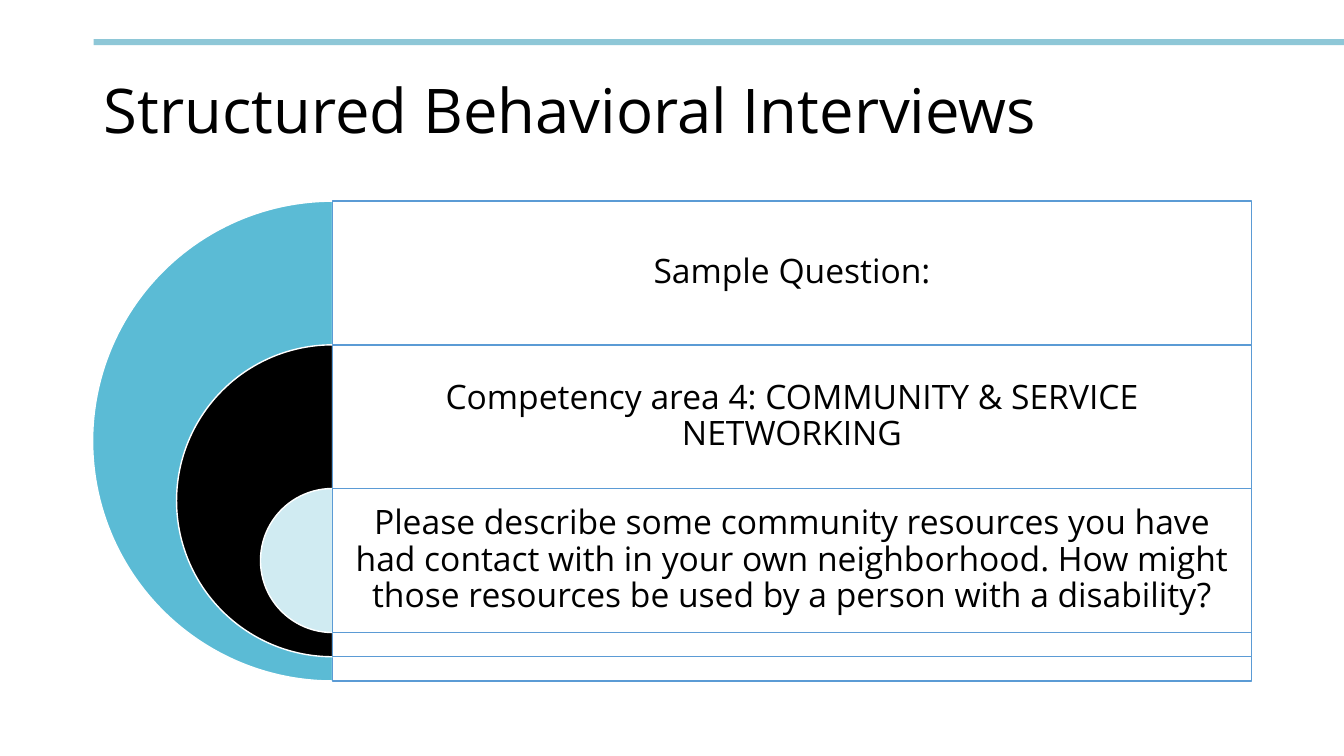
from dataclasses import dataclass

from lxml.etree import SubElement
from pptx import Presentation
from pptx.dml.color import RGBColor
from pptx.enum.shapes import MSO_SHAPE as Kind
from pptx.enum.text import MSO_ANCHOR as Anchor, PP_ALIGN as Align
from pptx.oxml.ns import qn
from pptx.shapes.autoshape import Shape
from pptx.slide import Slide
from pptx.text.text import TextFrame
from pptx.util import Cm, Pt

WIDE, HIGH = 33.87, 19.05
AXIS, TOP = 8.38, 5.07
BAND, SHRINK = 3.62, 4.23
DISC, WIDTH = 12.09, 23.16


@dataclass
class Level:
    text: str
    fill: str


LEVELS = [
    Level("Sample Question:", "5BBBD5"),
    Level("Competency area 4: COMMUNITY & SERVICE NETWORKING", "000000"),
    Level("Please describe some community resources you have had contact "
          "with in your own neighborhood. How might those resources be used "
          "by a person with a disability?", "D0EBF2"),
]


def color(code: str) -> RGBColor:
    return RGBColor.from_string(code)


def draw(slide: Slide, kind: Kind, box: tuple[float, ...], fill: str,
         line: str = "") -> Shape:
    shape = slide.shapes.add_shape(kind, *map(Cm, box))
    shape.shadow.inherit = False
    shape.fill.solid()
    shape.fill.fore_color.rgb = color(fill)
    if line:
        shape.line.color.rgb = color(line)
        shape.line.width = Pt(1)
    else:
        shape.line.fill.background()
    return shape


def write(frame: TextFrame, text: str, size: int, align: Align,
          inset: dict[str, float]) -> None:
    frame.text = text
    form = {"word_wrap": True, "vertical_anchor": Anchor.MIDDLE}
    form |= {f"margin_{side}": Cm(gap) for side, gap in inset.items()}
    for name, value in form.items():
        setattr(frame, name, value)
    para = frame.paragraphs[0]
    para.alignment = align
    para.line_spacing = 0.9
    for name, value in {"name": "Open Sans", "size": Pt(size)}.items():
        setattr(para.font, name, value)
    para.font.color.rgb = color("000000")


def fade(shape: Shape, share: int) -> None:
    """Set the opacity of a solid fill, in percent."""
    tone = shape.fill._xPr.find(qn("a:solidFill"))[0]
    SubElement(tone, qn("a:alpha")).set("val", str(share * 1000))


def add_level(slide: Slide, level: Level, rank: int) -> None:
    """Draw a half disc with its panel and text; each rank sits inside the last."""
    top = TOP + rank * BAND
    size = DISC - rank * SHRINK
    half = draw(slide, Kind.PIE, (AXIS - size / 2, top, size, size),
                level.fill, "FFFFFF")
    half.adjustments[0] = 54  # 90 degrees
    half.adjustments[1] = 162  # 270 degrees
    panel = draw(slide, Kind.RECTANGLE, (AXIS, top, WIDTH, size),
                 "FFFFFF", "5B9BD5")
    fade(panel, 90)
    label = slide.shapes.add_textbox(*map(Cm, (AXIS, top, WIDTH, BAND)))
    sides = ("left", "top", "right", "bottom")
    write(label.text_frame, level.text, 24, Align.CENTER,
          dict.fromkeys(sides, 0.25))


def main() -> None:
    deck = Presentation()
    deck.slide_width, deck.slide_height = Cm(WIDE), Cm(HIGH)
    slide = deck.slides.add_slide(deck.slide_layouts.get_by_name("Title Only"))
    draw(slide, Kind.RECTANGLE, (2.36, 0.99, WIDE - 2.36, 0.15), "8EC7D7")

    title = slide.shapes.title
    box = {"left": 2.34, "top": 1.02, "width": 29.21, "height": 3.68}
    for name, value in box.items():
        setattr(title, name, Cm(value))
    write(title.text_frame, "Structured Behavioral Interviews", 44, Align.LEFT,
          {"left": 0.28, "top": 0.13, "right": 0.25, "bottom": 0.13})

    for rank, level in enumerate(LEVELS):
        add_level(slide, level, rank)
    deck.save("out.pptx")


if __name__ == "__main__":
    main()
